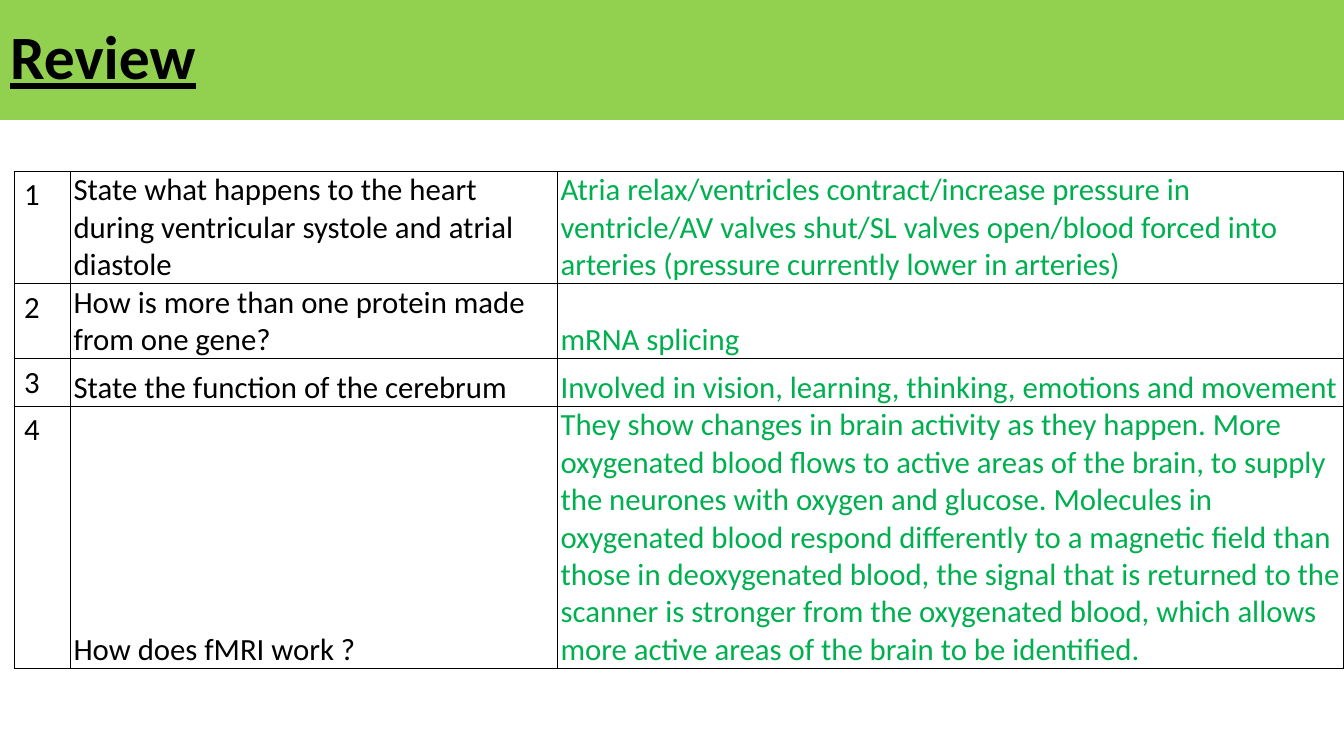
"""Build the Review slide: a green title band above a question and answer table."""
import dataclasses

import lxml.etree
import pptx
import pptx.dml.color
import pptx.enum.text
import pptx.oxml.ns
import pptx.util


@dataclasses.dataclass(frozen=True)
class Theme:
    """Hold the colours, font and type sizes of the slide."""
    font: str = "Calibri"
    title_size: int = 44
    table_size: int = 22
    border_width: int = 1
    band: str = "92D050"
    ink: str = "000000"
    answer: str = "00B050"


EMU_PER_PX = 9144
SLIDE_SIZE = (1333, 750)
COLUMN_WIDTHS = (56, 483, 780)
ROW_HEIGHT = 45
QUESTIONS = [
    ("State what happens to the heart during ventricular systole and atrial diastole",
     "Atria relax/ventricles contract/increase pressure in ventricle/AV valves shut/"
     "SL valves open/blood forced into arteries (pressure currently lower in arteries)"),
    ("How is more than one protein made from one gene?", "mRNA splicing"),
    ("State the function of the cerebrum",
     "Involved in vision, learning, thinking, emotions and movement"),
    ("How does fMRI work ?",
     "They show changes in brain activity as they happen. More oxygenated blood flows to "
     "active areas of the brain, to supply the neurones with oxygen and glucose. Molecules "
     "in oxygenated blood respond differently to a magnetic field than those in "
     "deoxygenated blood, the signal that is returned to the scanner is stronger from the "
     "oxygenated blood, which allows more active areas of the brain to be identified."),
]


def px(length):
    """Turn whole pixels into EMU."""
    return pptx.util.Emu(length * EMU_PER_PX)


def rgb(colour):
    """Turn a hex string into a colour."""
    return pptx.dml.color.RGBColor.from_string(colour)


def write_text(frame, text, *, font, size, colour, bold=False, underline=False, spacing=None):
    """Write one left-aligned paragraph with the given format."""
    paragraph = frame.paragraphs[0]
    paragraph.alignment = pptx.enum.text.PP_ALIGN.LEFT
    paragraph.line_spacing = spacing
    run = paragraph.add_run()
    run.text = text
    run.font.name = font
    run.font.size = pptx.util.Pt(size)
    run.font.color.rgb = rgb(colour)
    run.font.bold = bold
    run.font.underline = underline


class SlideBuilder:
    """Draw elements on the current slide in one theme."""

    def __init__(self, slide, theme):
        """Keep the slide and its theme."""
        self.slide = slide
        self.theme = theme

    def title(self, text, left, top, width, height):
        """Place the title as a filled band."""
        title = self.slide.shapes.title
        title.left, title.top, title.width, title.height = map(px, (left, top, width, height))
        title.fill.solid()
        title.fill.fore_color.rgb = rgb(self.theme.band)
        frame = title.text_frame
        frame.auto_size = pptx.enum.text.MSO_AUTO_SIZE.NONE
        frame.vertical_anchor = pptx.enum.text.MSO_ANCHOR.MIDDLE
        write_text(frame, text, font=self.theme.font, size=self.theme.title_size,
                   colour=self.theme.ink, bold=True, underline=True, spacing=0.9)

    def border(self, cell):
        """Draw a thin line on all four sides of a cell."""
        properties = cell._tc.get_or_add_tcPr()
        qn = pptx.oxml.ns.qn
        for position, side in enumerate("LRTB"):
            line = lxml.etree.Element(qn(f"a:ln{side}"),
                                      w=str(pptx.util.Pt(self.theme.border_width)))
            fill = lxml.etree.SubElement(line, qn("a:solidFill"))
            lxml.etree.SubElement(fill, qn("a:srgbClr"), val=self.theme.ink)
            properties.insert(position, line)

    def cell(self, cell, text, colour, tight):
        """Fill one table cell; a tight cell has narrow margins and sits at the bottom."""
        cell.fill.background()
        if tight:
            cell.margin_left = cell.margin_right = px(3)
            cell.margin_top = cell.margin_bottom = 0
            cell.vertical_anchor = pptx.enum.text.MSO_ANCHOR.BOTTOM
        write_text(cell.text_frame, text, font=self.theme.font,
                   size=self.theme.table_size, colour=colour)
        self.border(cell)

    def question_table(self, questions, left, top, height):
        """Add the numbered table of questions and answers."""
        frame = self.slide.shapes.add_table(
            len(questions), len(COLUMN_WIDTHS),
            px(left), px(top), px(sum(COLUMN_WIDTHS)), px(height))
        table = frame.table
        table.first_row = table.horz_banding = False
        for column, width in zip(table.columns, COLUMN_WIDTHS):
            column.width = px(width)
        colours = (self.theme.ink, self.theme.ink, self.theme.answer)
        for number, (row, entry) in enumerate(zip(table.rows, questions), start=1):
            row.height = px(ROW_HEIGHT)
            texts = (str(number), *entry)
            for index, (cell, text, colour) in enumerate(zip(row.cells, texts, colours)):
                self.cell(cell, text, colour, tight=index > 0)
        frame.height = px(height)


def main():
    """Build and save the presentation."""
    presentation = pptx.Presentation()
    presentation.slide_width, presentation.slide_height = map(px, SLIDE_SIZE)
    layout = presentation.slide_layouts.get_by_name("Title Only")
    builder = SlideBuilder(presentation.slides.add_slide(layout), Theme())
    builder.title("Review", 0, 0, SLIDE_SIZE[0], 119)
    builder.question_table(QUESTIONS, 14, 170, 487)
    presentation.save("out.pptx")


if __name__ == "__main__":
    main()
